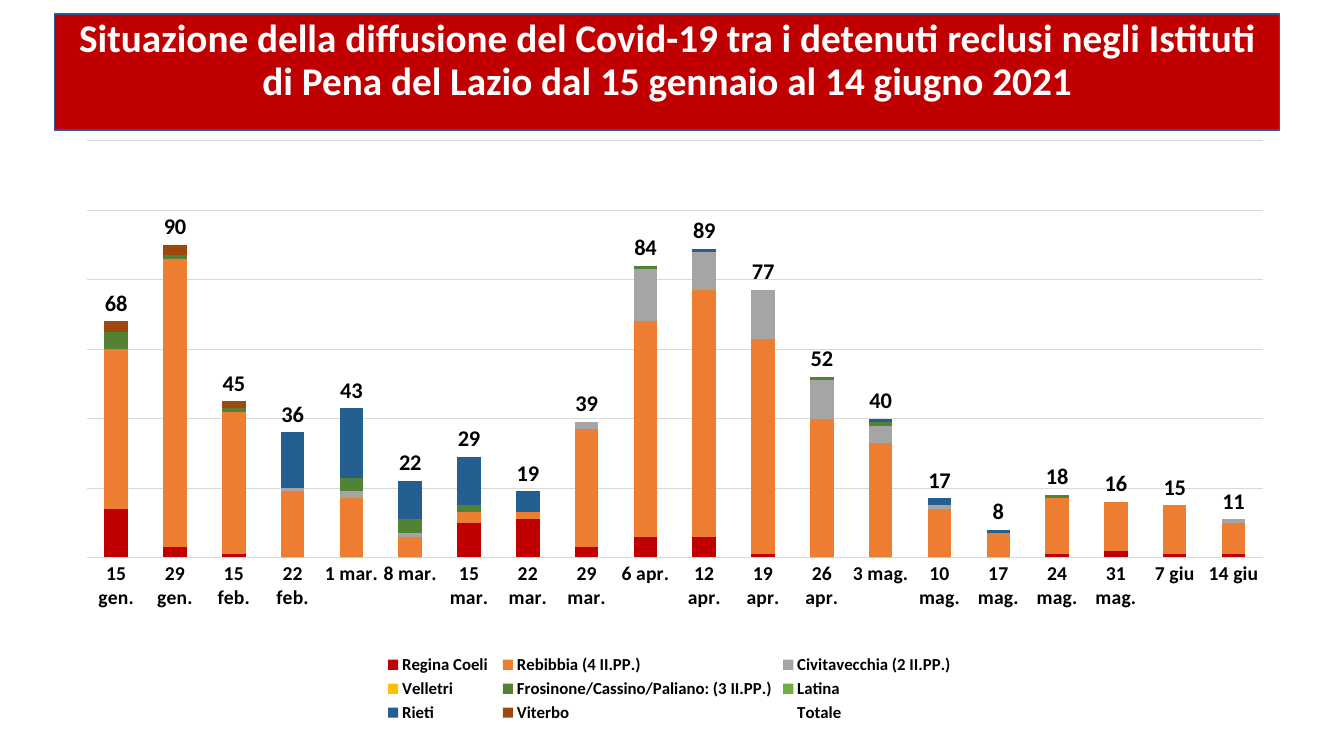
from lxml import etree
from pptx import Presentation
from pptx import util as u
from pptx.chart import data as cd
from pptx.dml.color import RGBColor
from pptx.enum import chart as ce, shapes, text

HUES = {"red": "C00000", "edge": "325491", "white": "FFFFFF", "black": "000000",
        "grid": "D9D9D9", "orange": "ED7D31", "gray": "A5A5A5", "gold": "FFC000",
        "moss": "548235", "green": "70AD47", "blue": "255E91", "brown": "9E480E"}
FONTS = {
    "title": {"name": "Calibri", "size": u.Pt(28), "bold": True},
    "chart": {"name": "Calibri", "size": u.Pt(10)},
    "axis": {"name": "Calibri", "size": u.Pt(14), "bold": True},
    "legend": {"name": "Calibri", "size": u.Pt(12), "bold": True},
    "label": {"name": "Calibri", "size": u.Pt(16), "bold": True},
}
TITLE = ("Situazione della diffusione del Covid-19 tra i detenuti reclusi negli "
         "Istituti di Pena del Lazio dal 15 gennaio al 14 giugno 2021")
DATES = ["15 gen.", "29 gen.", "15 feb.", "22 feb.", "1 mar.", "8 mar.", "15 mar.",
         "22 mar.", "29 mar.", "6 apr.", "12 apr.", "19 apr.", "26 apr.", "3 mag.",
         "10 mag.", "17 mag.", "24 mag.", "31 mag.", "7 giu", "14 giu"]
NONE = [0] * len(DATES)
JAILS = [
    ("Regina Coeli ", "red",
     [14, 3, 1, 0, 0, 0, 10, 11, 3, 6, 6, 1, 0, 0, 0, 0, 1, 2, 1, 1]),
    ("Rebibbia (4 II.PP.)", "orange",
     [46, 83, 41, 19, 17, 6, 3, 2, 34, 62, 71, 62, 40, 33, 14, 7, 16, 14, 14, 9]),
    ("Civitavecchia (2 II.PP.)", "gray",
     [0, 0, 0, 1, 2, 1, 0, 0, 2, 15, 11, 14, 11, 5, 1, 0, 0, 0, 0, 1]),
    ("Velletri", "gold", NONE),
    ("Frosinone/Cassino/Paliano: (3 II.PP.)", "moss",
     [5, 1, 1, 0, 4, 4, 2, 0, 0, 1, 0, 0, 1, 1, 0, 0, 1, 0, 0, 0]),
    ("Latina", "green", NONE),
    ("Rieti", "blue",
     [0, 0, 0, 16, 20, 11, 14, 6, 0, 0, 1, 0, 0, 1, 2, 1, 0, 0, 0, 0]),
    ("Viterbo", "brown", [3, 3, 2] + NONE[3:]),
]
TOTALS = [sum(day) for day in zip(*(vals for _, _, vals in JAILS))]


def tint(name):
    return RGBColor.from_string(HUES[name])


def assign(item, values):
    for key, value in values.items():
        setattr(item, key, value)


def style(font, kind, hue="black"):
    assign(font, FONTS[kind])
    font.color.rgb = tint(hue)


def rule(line, hue, width):
    line.color.rgb = tint(hue)
    line.width = u.Pt(width)


def add_title(slide, box):
    banner = slide.shapes.add_shape(shapes.MSO_SHAPE.RECTANGLE, *map(u.Inches, box))
    banner.shadow.inherit = False
    banner.fill.solid()
    banner.fill.fore_color.rgb = tint("red")
    rule(banner.line, "edge", 1)
    frame = banner.text_frame
    assign(frame, {"word_wrap": True, "vertical_anchor": text.MSO_ANCHOR.TOP})
    para = frame.paragraphs[0]
    assign(para, {"alignment": text.PP_ALIGN.CENTER, "line_spacing": 0.9})
    run = para.add_run()
    run.text = TITLE
    style(run.font, "title", "white")


def place_plot(chart, box):
    area = chart.plots[0]._element.getparent()
    ns = etree.QName(area).namespace
    for old in area.findall(f"{{{ns}}}layout"):
        area.remove(old)
    layout = etree.Element(f"{{{ns}}}layout")
    manual = etree.SubElement(layout, f"{{{ns}}}manualLayout")
    parts = [("layoutTarget", "inner"), ("xMode", "edge"), ("yMode", "edge")]
    for tag, value in parts + list(zip("xywh", box)):
        etree.SubElement(manual, f"{{{ns}}}{tag}", val=str(value))
    area.insert(0, layout)


def add_cases(slide, box):
    data = cd.CategoryChartData()
    data.categories = DATES
    for name, _, vals in JAILS:
        data.add_series(name, vals)
    data.add_series("Totale", TOTALS)
    chart = slide.shapes.add_chart(ce.XL_CHART_TYPE.COLUMN_STACKED,
                                   *map(u.Inches, box), data).chart
    style(chart.font, "chart")
    assign(chart, {"has_title": False, "has_legend": True})
    assign(chart.legend, {"position": ce.XL_LEGEND_POSITION.BOTTOM,
                          "include_in_layout": False})
    style(chart.legend.font, "legend")

    dates = chart.category_axis
    dates.major_tick_mark = ce.XL_TICK_MARK.NONE
    style(dates.tick_labels.font, "axis")
    rule(dates.format.line, "grid", 0.75)
    scale = chart.value_axis
    assign(scale, {"minimum_scale": 0, "maximum_scale": 120, "major_unit": 20,
                   "has_major_gridlines": True, "visible": False})
    rule(scale.major_gridlines.format.line, "grid", 0.75)

    plot = chart.plots[0]
    assign(plot, {"gap_width": 150, "overlap": 100, "vary_by_categories": False})
    for series, (_, hue, _) in zip(plot.series, JAILS):
        series.format.fill.solid()
        series.format.fill.fore_color.rgb = tint(hue)
    total = plot.series[len(JAILS)]
    total.format.fill.background()
    total.format.line.fill.background()
    labels = total.data_labels
    assign(labels, {"show_value": True,
                    "position": ce.XL_LABEL_POSITION.INSIDE_BASE})
    style(labels.font, "label")
    place_plot(chart, (0.016, 0.02, 0.977, 0.697))


def main():
    deck = Presentation()
    assign(deck, {"slide_width": u.Inches(13.33), "slide_height": u.Inches(7.5)})
    slide = deck.slides.add_slide(deck.slide_layouts[6])
    add_title(slide, (0.54, 0.14, 12.15, 1.15))
    add_cases(slide, (0.67, 1.28, 11.94, 5.93))
    deck.save("out.pptx")


if __name__ == "__main__":
    main()
